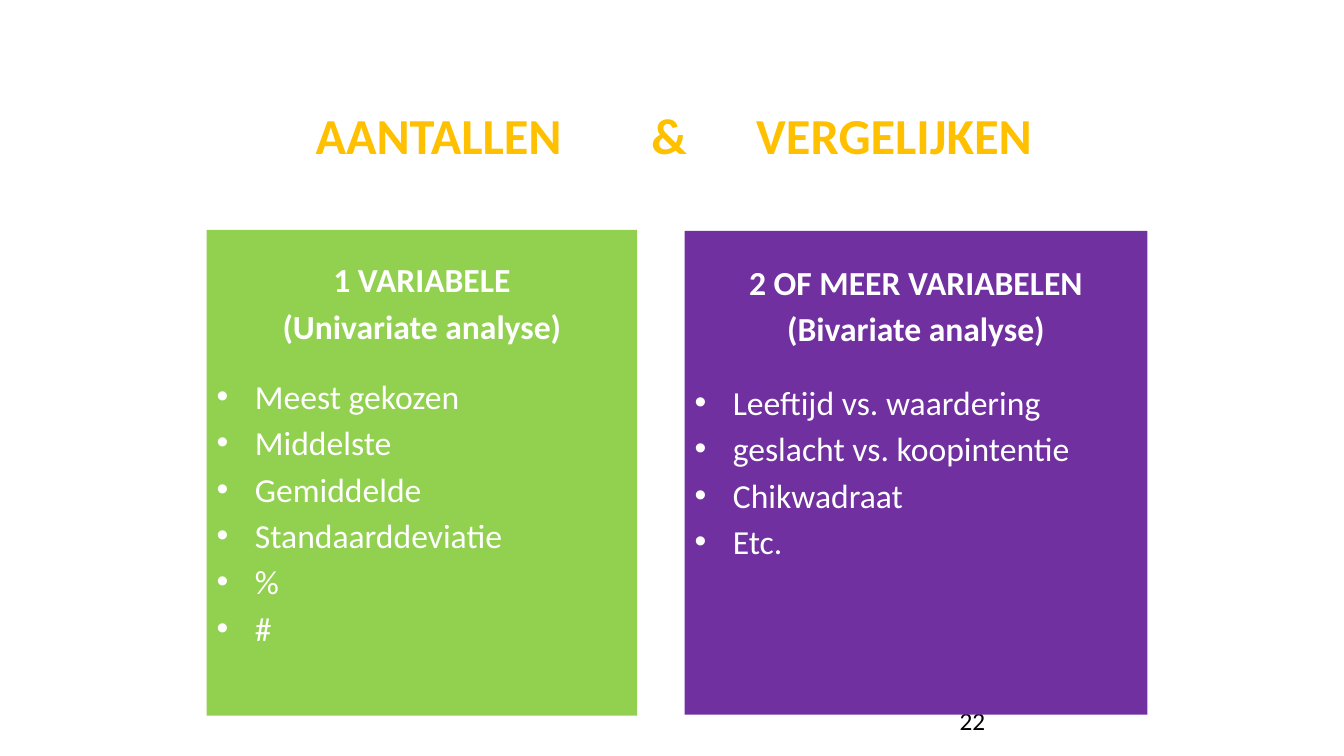
"""Build a slide that sets univariate beside bivariate analysis."""
from dataclasses import dataclass

from lxml.etree import SubElement
from pptx import Presentation
from pptx.dml.color import RGBColor
from pptx.enum.shapes import MSO_SHAPE
from pptx.enum.text import MSO_ANCHOR, PP_ALIGN
from pptx.oxml.ns import qn
from pptx.slide import Slide
from pptx.text.text import TextFrame
from pptx.util import Inches, Pt

WIDE, HIGH = 13.33, 7.5


@dataclass(frozen=True)
class Theme:
    """Colours, fonts and type sizes."""
    gold: str = "FFC000"
    green: str = "92D050"
    purple: str = "7030A0"
    white: str = "FFFFFF"
    black: str = "000000"
    font: str = "Calibri"
    dot: str = "Arial"
    title: float = 36
    body: float = 24
    number: float = 18
    gap: float = 4.3


@dataclass(frozen=True)
class Area:
    """A place on the slide, in percent of its width and height."""
    left: float
    top: float
    width: float
    height: float

    def box(self) -> tuple[int, int, int, int]:
        """Return left, top, width and height as lengths."""
        across, down = WIDE / 100, HIGH / 100
        return (Inches(self.left * across), Inches(self.top * down),
                Inches(self.width * across), Inches(self.height * down))


@dataclass(frozen=True)
class Panel:
    """A coloured block with a heading and bullets."""
    area: Area
    fill: str
    inset: float
    lead: float
    heads: tuple[str, ...]
    items: tuple[str, ...]


THEME = Theme()
PANELS = (
    Panel(Area(15.38, 30.4, 32.03, 64.27), THEME.green, 0.29, 21.4,
          ("1 VARIABELE", "(Univariate analyse)"),
          ("Meest gekozen", "Middelste", "Gemiddelde",
           "Standaarddeviatie", "%", "#")),
    Panel(Area(50.94, 30.53, 34.43, 64), THEME.purple, 0.31, 23.6,
          ("2 OF MEER VARIABELEN", "(Bivariate analyse)"),
          ("Leeftijd vs. waardering", "geslacht vs. koopintentie",
           "Chikwadraat", "Etc.")),
)


def write(frame: TextFrame, text: str, *, size: float, color: str,
          bold: bool = False, align: PP_ALIGN = PP_ALIGN.LEFT,
          before: float = 0, line: float = 1, bullet: bool = False,
          tabs: tuple[float, ...] = ()) -> None:
    """Add one formatted paragraph, using the first one if it is empty."""
    first = frame.paragraphs[0]
    para = first if not first.runs else frame.add_paragraph()
    props = para._p.get_or_add_pPr()
    if bullet:
        props.set("marL", str(Inches(0.38)))
        props.set("indent", str(-Inches(0.38)))
        SubElement(props, qn("a:buFont")).set("typeface", THEME.dot)
        SubElement(props, qn("a:buChar")).set("char", "•")
    if tabs:
        stops = SubElement(props, qn("a:tabLst"))
        for place in tabs:
            stop = SubElement(stops, qn("a:tab"))
            stop.set("pos", str(Inches(place)))
            stop.set("algn", "l")
    para.alignment = align
    para.line_spacing = line
    para.space_before = Pt(before)
    run = para.add_run()
    run.text = text
    run.font.name, run.font.size, run.font.bold = THEME.font, Pt(size), bold
    run.font.color.rgb = RGBColor.from_string(color)


def label(slide: Slide, area: Area) -> TextFrame:
    """Add a wrapping text box and return its frame."""
    frame = slide.shapes.add_textbox(*area.box()).text_frame
    frame.word_wrap = True
    return frame


def draw(slide: Slide, panel: Panel) -> None:
    """Draw one panel with its heading and bullets."""
    shape = slide.shapes.add_shape(MSO_SHAPE.RECTANGLE, *panel.area.box())
    shape.shadow.inherit = False
    shape.fill.solid()
    shape.fill.fore_color.rgb = RGBColor.from_string(panel.fill)
    shape.line.fill.background()
    frame = shape.text_frame
    frame.word_wrap = True
    frame.vertical_anchor = MSO_ANCHOR.TOP
    frame.margin_top = Inches(panel.inset)
    for row, text in enumerate(panel.heads):
        write(frame, text, size=THEME.body, color=THEME.white, bold=True,
              align=PP_ALIGN.CENTER, before=THEME.gap if row else 0)
    for row, text in enumerate(panel.items):
        write(frame, text, size=THEME.body, color=THEME.white, bullet=True,
              before=THEME.gap if row else panel.lead)


def main() -> None:
    """Build and save the slide."""
    deck = Presentation()
    deck.slide_width, deck.slide_height = Inches(WIDE), Inches(HIGH)
    slide = deck.slides.add_slide(deck.slide_layouts[6])

    number = label(slide, Area(70.67, 92.67, 22.5, 5.33))
    number.vertical_anchor = MSO_ANCHOR.MIDDLE
    write(number, "22", size=THEME.number, color=THEME.black)

    title = label(slide, Area(12.53, 14, 73.29, 16.67))
    title.margin_left = Inches(1.46)
    write(title, "AANTALLEN\t&\tVERGELIJKEN", size=THEME.title,
          color=THEME.gold, bold=True, line=0.9, tabs=(3.33, 4.37))

    for panel in PANELS:
        draw(slide, panel)
    deck.save("out.pptx")


if __name__ == "__main__":
    main()
